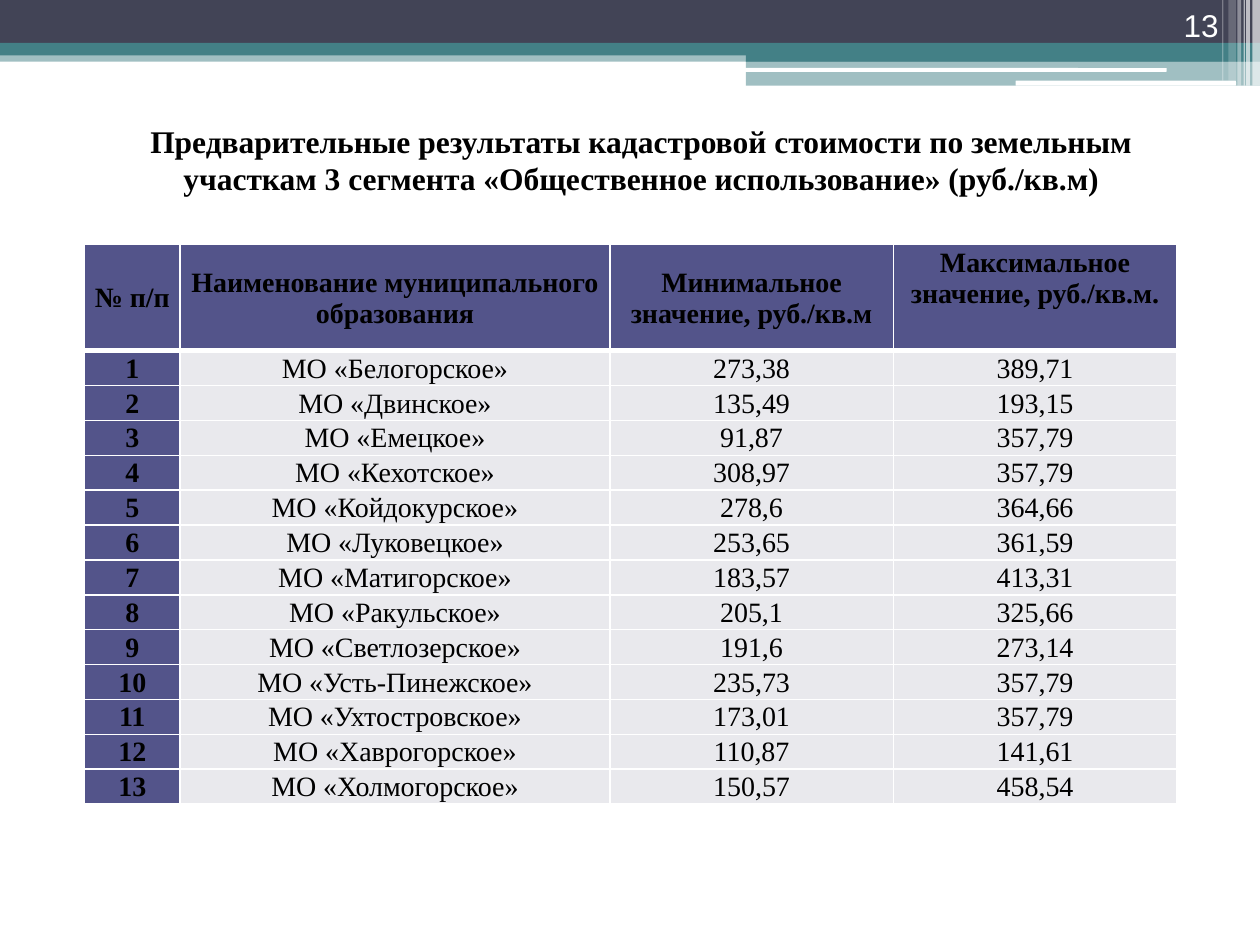
import pptx
import pptx.dml.color
import pptx.enum.shapes
import pptx.enum.text
import pptx.oxml
import pptx.oxml.ns
import pptx.util
from pptx.util import Inches

SHAPE = pptx.enum.shapes.MSO_SHAPE
ALIGN = pptx.enum.text.PP_ALIGN
ANCHOR = pptx.enum.text.MSO_ANCHOR
SERIF = "Times New Roman"
NAVY, TEAL, WHITE, BLACK = "424456", "438086", "FFFFFF", "000000"
PURPLE, GREY = "53548A", "E9E9ED"

BANDS = [
    (0, 0.4, 10, 0.09, TEAL, 50),
    (0, 0, 10, 0.34, NAVY, 100),
    (0, 0.34, 10, 0.1, TEAL, 100),
    (5.92, 0.39, 4.08, 0.1, TEAL, 100),
    (5.92, 0.48, 4.08, 0.2, TEAL, 50),
]
RULES = [(5.91, 0.54, 3.35, 0.03), (8.06, 0.64, 1.75, 0.04)]
STRIPES = [
    (9.94, 0.06, 0.68, 65),
    (9.89, 0.03, 0.68, 65),
    (9.87, 0.01, 0.68, 60),
    (9.82, 0.03, 0.68, 40),
    (9.75, 0.06, 0.64, 20),
    (9.7, 0.01, 0.64, 30),
]
TITLE = ("Предварительные результаты кадастровой стоимости по земельным "
         "участкам 3 сегмента «Общественное использование» (руб./кв.м)")
HEADER = ["№ п/п", "Наименование муниципального образования",
          "Минимальное значение, руб./кв.м", "Максимальное значение, руб./кв.м.\n"]
VALUES = [
    ("Белогорское", "273,38", "389,71"),
    ("Двинское", "135,49", "193,15"),
    ("Емецкое", "91,87", "357,79"),
    ("Кехотское", "308,97", "357,79"),
    ("Койдокурское", "278,6", "364,66"),
    ("Луковецкое", "253,65", "361,59"),
    ("Матигорское", "183,57", "413,31"),
    ("Ракульское", "205,1", "325,66"),
    ("Светлозерское", "191,6", "273,14"),
    ("Усть-Пинежское", "235,73", "357,79"),
    ("Ухтостровское", "173,01", "357,79"),
    ("Хаврогорское", "110,87", "141,61"),
    ("Холмогорское", "150,57", "458,54"),
]
COL_WIDTHS = [0.76, 3.41, 2.25, 2.25]
HEADER_HEIGHT, ROW_HEIGHT = 0.81, 0.27


def rgb(value):
    """Turn a hex string into a colour."""
    return pptx.dml.color.RGBColor.from_string(value)


def write(tf, text, size, font, color, bold=False, align=ALIGN.CENTER):
    """Write one formatted paragraph, with line breaks at newlines."""
    p = tf.paragraphs[0]
    p.alignment = align
    for i, line in enumerate(text.split("\n")):
        if i:
            p.add_line_break()
        if line:
            r = p.add_run()
            r.text = line
            r.font.size = pptx.util.Pt(size)
            r.font.name = font
            r.font.bold = bold
            r.font.color.rgb = rgb(color)


def add_block(s, x, y, w, h, color, opacity=100, kind=SHAPE.RECTANGLE):
    """Add a plain filled shape without outline."""
    sp = s.shapes.add_shape(kind, Inches(x), Inches(y), Inches(w), Inches(h))
    sp.shadow.inherit = False
    sp.line.fill.background()
    sp.fill.solid()
    sp.fill.fore_color.rgb = rgb(color)
    if opacity < 100:
        clr = sp.fill._xPr.find(".//" + pptx.oxml.ns.qn("a:srgbClr"))
        clr.append(pptx.oxml.parse_xml(
            f'<a:alpha {pptx.oxml.ns.nsdecls("a")} val="{opacity * 1000}"/>'))


def add_banner(s):
    """Add the bands, white rules and stripes along the top edge."""
    for band in BANDS:
        add_block(s, *band)
    for rule in RULES:
        add_block(s, *rule, WHITE, kind=SHAPE.ROUNDED_RECTANGLE)
    for x, w, h, opacity in STRIPES:
        add_block(s, x, 0, w, h, WHITE, opacity)


def set_title(s):
    """Place and fill the title placeholder."""
    sp = s.shapes.title
    sp.left, sp.top, sp.width, sp.height = map(Inches, (0.59, 0.68, 9, 1.17))
    sp.text_frame.vertical_anchor = ANCHOR.MIDDLE
    write(sp.text_frame, TITLE, 18, SERIF, BLACK, bold=True)


def add_page_number(s):
    """Add the page number in the top band."""
    sp = s.shapes.add_textbox(Inches(8.94), Inches(0), Inches(0.83), Inches(0.4))
    tf = sp.text_frame
    tf.word_wrap = True
    tf.vertical_anchor = ANCHOR.BOTTOM
    write(tf, "13", 18, "Arial", WHITE, align=ALIGN.RIGHT)


def set_borders(cell, top, bottom):
    """Draw white borders of the given top and bottom widths in points."""
    tcPr = cell._tc.get_or_add_tcPr()
    sides = [("lnL", 1), ("lnR", 1), ("lnT", top), ("lnB", bottom)]
    for i, (tag, width) in enumerate(sides):
        tcPr.insert(i, pptx.oxml.parse_xml(
            f'<a:{tag} {pptx.oxml.ns.nsdecls("a")} w="{pptx.util.Pt(width)}">'
            f'<a:solidFill><a:srgbClr val="{WHITE}"/></a:solidFill></a:{tag}>'))


def format_cell(cell, text, heading):
    """Fill one table cell and write its text."""
    cell.margin_left = cell.margin_right = cell.margin_top = Inches(0.01)
    cell.margin_bottom = 0
    cell.vertical_anchor = ANCHOR.MIDDLE
    cell.fill.solid()
    cell.fill.fore_color.rgb = rgb(PURPLE if heading else GREY)
    write(cell.text_frame, text, 16, SERIF, BLACK, bold=heading)


def add_values_table(s):
    """Add the table of land values by municipality."""
    rows = [HEADER] + [[str(n), f"МО «{name}»", low, high]
                       for n, (name, low, high) in enumerate(VALUES, 1)]
    heights = [HEADER_HEIGHT] + [ROW_HEIGHT] * len(VALUES)
    table = s.shapes.add_table(
        len(rows), len(COL_WIDTHS), Inches(0.67), Inches(1.94),
        Inches(sum(COL_WIDTHS)), Inches(sum(heights))).table
    for column, width in zip(table.columns, COL_WIDTHS):
        column.width = Inches(width)
    for i, row in enumerate(rows):
        table.rows[i].height = Inches(heights[i])
        for j, text in enumerate(row):
            cell = table.cell(i, j)
            format_cell(cell, text, heading=i == 0 or j == 0)
            set_borders(cell, top=3 if i == 1 else 1, bottom=3 if i == 0 else 1)


def main():
    """Build the slide and save it."""
    prs = pptx.Presentation()
    prs.slide_width, prs.slide_height = Inches(10), Inches(7.5)
    s = prs.slides.add_slide(prs.slide_layouts[5])
    add_banner(s)
    set_title(s)
    add_page_number(s)
    add_values_table(s)
    prs.save("out.pptx")


if __name__ == "__main__":
    main()
